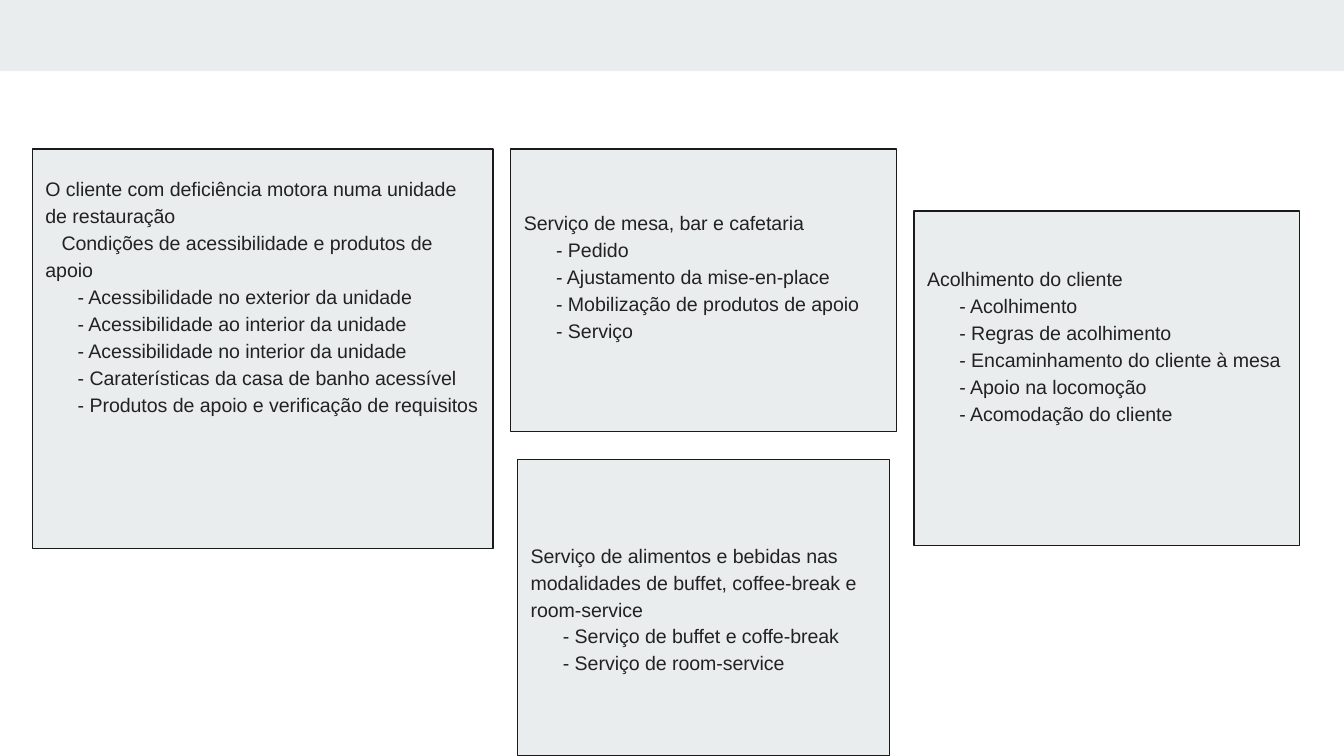
from pptx import Presentation
from pptx.dml.color import RGBColor
from pptx.enum.shapes import MSO_SHAPE
from pptx.enum.text import MSO_ANCHOR, PP_ALIGN
from pptx.util import Inches, Pt

COLORS = {"panel": "E9EDEE", "outline": "1A1A1A", "text": "222222"}
MARGIN = 0.1
ITEM_INDENT = 0.24

# Each topic: left, top, width, height, free space below the text, heading, subheading, items
TOPICS = [
    (6.8, 1.57, 2.87, 2.49, 0.5, "Acolhimento do cliente", None, [
        "Acolhimento",
        "Regras de acolhimento",
        "Encaminhamento do cliente à mesa",
        "Apoio na locomoção",
        "Acomodação do cliente",
    ]),
    (3.8, 1.11, 2.87, 2.1, 0.23, "Serviço de mesa, bar e cafetaria", None, [
        "Pedido",
        "Ajustamento da mise-en-place",
        "Mobilização de produtos de apoio",
        "Serviço",
    ]),
    (3.85, 3.42, 2.77, 2.2, 0,
     "Serviço de alimentos e bebidas nas modalidades de buffet, coffee-break e room-service",
     None, [
         "Serviço de buffet e coffe-break",
         "Serviço de room-service",
     ]),
    (0.24, 1.11, 3.43, 2.97, 0.8,
     "O cliente com deficiência motora numa unidade de restauração",
     "Condições de acessibilidade e produtos de apoio", [
         "Acessibilidade no exterior da unidade",
         "Acessibilidade ao interior da unidade",
         "Acessibilidade no interior da unidade",
         "Caraterísticas da casa de banho acessível",
         "Produtos de apoio e verificação de requisitos",
     ]),
]


def color(name):
    return RGBColor.from_string(COLORS[name])


def add_panel(page, left, top, width, height):
    panel = page.shapes.add_shape(MSO_SHAPE.RECTANGLE, Inches(left), Inches(top),
                                  Inches(width), Inches(height))
    panel.shadow.inherit = False
    panel.fill.solid()
    panel.fill.fore_color.rgb = color("panel")
    panel.line.fill.background()
    return panel


def write_line(para, text, left=0, first_line=0):
    """Fill a paragraph, with its left margin and extra first-line indent in inches."""
    para.text = text
    para.alignment = PP_ALIGN.LEFT
    para.line_spacing = 1.15
    properties = para._p.get_or_add_pPr()
    properties.set("marL", str(Inches(left)))
    properties.set("indent", str(Inches(first_line)))
    for span in para.runs:
        span.font.name = "Arial"
        span.font.size = Pt(10.5)
        span.font.color.rgb = color("text")


def add_topic(page, left, top, width, height, free_space, heading, subheading, items):
    box = add_panel(page, left, top, width, height)
    box.line.color.rgb = color("outline")
    box.line.width = Pt(0.75)
    frame = box.text_frame
    frame.word_wrap = True
    frame.vertical_anchor = MSO_ANCHOR.MIDDLE
    frame.margin_left = frame.margin_right = frame.margin_top = Inches(MARGIN)
    frame.margin_bottom = Inches(MARGIN + free_space)
    write_line(frame.paragraphs[0], heading)
    if subheading:
        write_line(frame.add_paragraph(), subheading, first_line=ITEM_INDENT / 2)
    for item in items:
        write_line(frame.add_paragraph(), f"- {item}", left=ITEM_INDENT)


def main():
    deck = Presentation()
    deck.slide_width = Inches(10)
    deck.slide_height = deck.slide_width * 9 // 16
    page = deck.slides.add_slide(deck.slide_layouts[6])
    add_panel(page, 0, 0, 10, 0.53)
    for topic in TOPICS:
        add_topic(page, *topic)
    deck.save("out.pptx")


if __name__ == "__main__":
    main()
